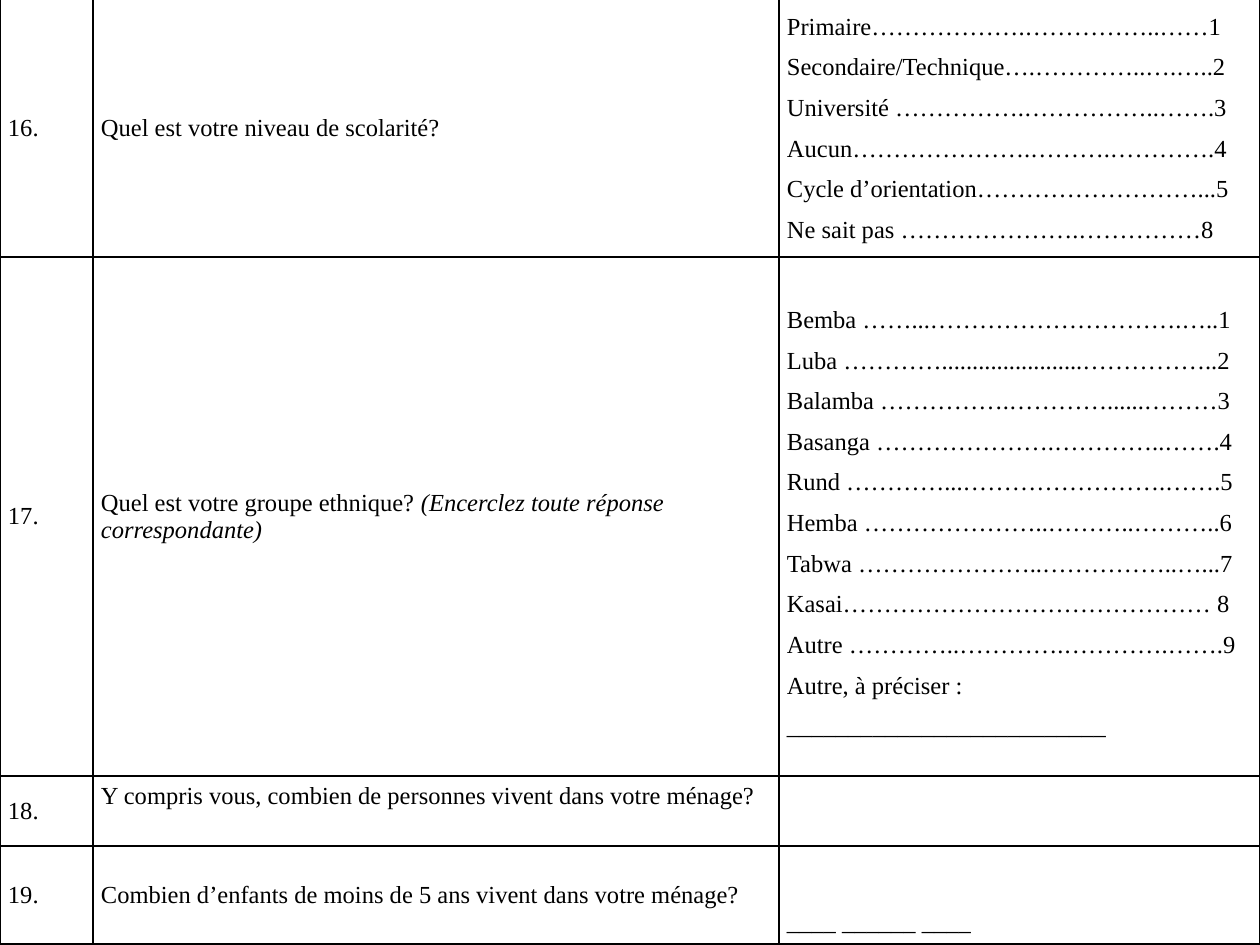
from lxml import etree
from pptx import Presentation
from pptx import util as u
from pptx.dml import color
from pptx.enum import text
from pptx.oxml import ns

PX = 914400 // 126
COLORS = {"ink": "000000", "paper": "FFFFFF", "backdrop": "0F56DC"}
COLUMN_WIDTHS = [93, 686, 481]
ROW_HEIGHTS = [257, 519, 70, 98]
TOP, MIDDLE, BOTTOM = (
    text.MSO_ANCHOR.TOP, text.MSO_ANCHOR.MIDDLE, text.MSO_ANCHOR.BOTTOM)

SCHOOLING = [
    "Primaire……………….……………..……1",
    "Secondaire/Technique….…………..….…..2",
    "Université …………….……………..…….3",
    "Aucun………………….……….………….4",
    "Cycle d’orientation………………………...5",
    "Ne sait pas ………………….……………8",
]
ETHNIC_GROUPS = [
    "Bemba ……...………………………….…..1",
    "Luba ………….......................……………..2",
    "Balamba …………….…………......………3",
    "Basanga ………………….…………..…….4",
    "Rund …………...…………………….…….5",
    "Hemba …………………..………..………..6",
    "Tabwa …………………..……………..…...7",
    "Kasai……………………………………… 8",
    "Autre …………..………….………….…….9",
    "Autre, à préciser :",
    "_" * 26,
]
QUESTIONS = [
    ("16.", "Quel est votre niveau de scolarité?", SCHOOLING),
    ("17.", "Quel est votre groupe ethnique? ", ETHNIC_GROUPS),
    ("18.", "Y compris vous, combien de personnes vivent dans votre ménage?", []),
    ("19.", "Combien d’enfants de moins de 5 ans vivent dans votre ménage?",
     ["____ ______ ____"]),
]
INSTRUCTION = "(Encerclez toute réponse correspondante)"
ANSWER_ANCHORS = [TOP, MIDDLE, MIDDLE, BOTTOM]


class Questionnaire:
    font_name = "Times New Roman"
    font_size = u.Pt(14)

    def __init__(self, slide):
        self.slide = slide
        self.fill(slide.background.fill, "backdrop")

    def rgb(self, name):
        return color.RGBColor.from_string(COLORS[name])

    def fill(self, fill, name):
        fill.solid()
        fill.fore_color.rgb = self.rgb(name)

    def table(self, left, top, widths, heights):
        grid = self.slide.shapes.add_table(
            len(heights), len(widths), left * PX, top * PX,
            sum(widths) * PX, sum(heights) * PX).table
        grid.first_row = grid.horz_banding = False
        for column, width in zip(grid.columns, widths):
            column.width = width * PX
        for row, height in zip(grid.rows, heights):
            row.height = height * PX
        return grid

    def borders(self, cell, sides):
        properties = cell._tc.get_or_add_tcPr()
        for side in sides:
            line = etree.SubElement(
                properties, ns.qn(f"a:ln{side}"), w=str(u.Pt(1)))
            solid = etree.SubElement(line, ns.qn("a:solidFill"))
            etree.SubElement(solid, ns.qn("a:srgbClr"), val=COLORS["ink"])

    def cell(self, cell, lines, anchor=MIDDLE, spacing=1.0, sides="LRTB"):
        self.borders(cell, sides)
        self.fill(cell.fill, "paper")
        cell.margin_left = cell.margin_right = 8 * PX
        cell.margin_top = cell.margin_bottom = 0
        cell.vertical_anchor = anchor
        cell.text_frame.text = "\n".join(lines)
        for paragraph in cell.text_frame.paragraphs:
            paragraph.line_spacing = spacing
            for run in paragraph.runs:
                self.style(run)

    def style(self, run, italic=False):
        run.font.name = self.font_name
        run.font.size = self.font_size
        run.font.italic = italic
        run.font.color.rgb = self.rgb("ink")


def main():
    deck = Presentation()
    deck.slide_width, deck.slide_height = u.Inches(10), u.Inches(7.5)
    page = Questionnaire(deck.slides.add_slide(deck.slide_layouts[6]))
    grid = page.table(0, 0, COLUMN_WIDTHS, ROW_HEIGHTS)
    for row, (number, question, answers) in enumerate(QUESTIONS):
        sides = "LRTB" if row else "LRB"
        page.cell(grid.cell(row, 0), [number], sides=sides)
        page.cell(grid.cell(row, 1), [question], sides=sides)
        page.cell(grid.cell(row, 2), answers, ANSWER_ANCHORS[row], 1.5, sides)

    instruction = grid.cell(1, 1).text_frame.paragraphs[0].add_run()
    instruction.text = INSTRUCTION
    page.style(instruction, italic=True)

    household = grid.cell(2, 1)
    household.vertical_anchor = TOP
    household.margin_top = 7 * PX
    grid.cell(3, 2).margin_bottom = 8 * PX
    deck.save("out.pptx")


if __name__ == "__main__":
    main()
